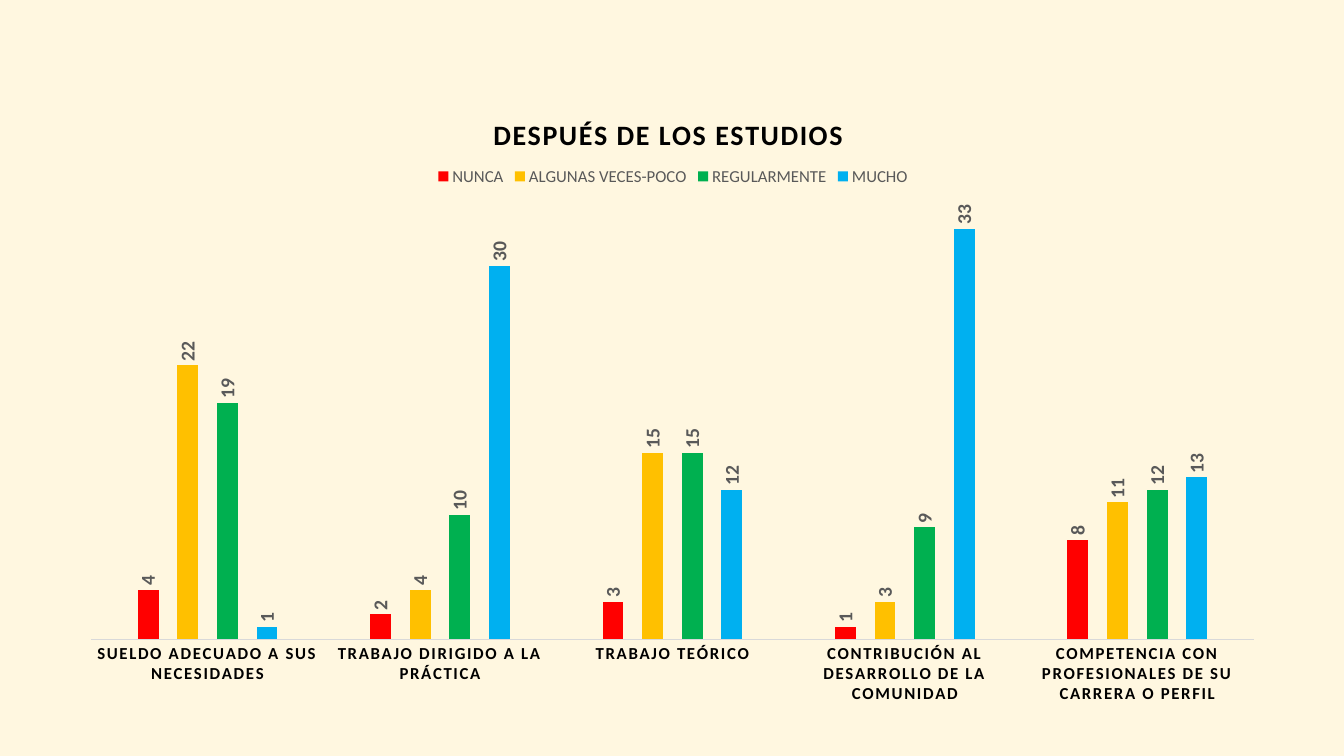
import pptx
import pptx.chart.data
import pptx.dml.color
import pptx.enum.chart
import pptx.oxml
import pptx.oxml.ns
import pptx.util

EMU_PER_PX = 9144000 // 960
SLIDE_SIZE = (1280, 720)
CHART_BOX = (63, 79, 1153, 604)

COLORS = {
    "background": "FFF7E0",
    "title": "000000",
    "category": "000000",
    "label": "595959",
    "axis": "D9D9D9",
    "NUNCA": "FF0000",
    "ALGUNAS VECES-POCO": "FFC000",
    "REGULARMENTE": "00B050",
    "MUCHO": "00B0F0",
}

CATEGORIES = [
    "SUELDO ADECUADO A SUS NECESIDADES",
    "TRABAJO DIRIGIDO A LA PRÁCTICA",
    "TRABAJO TEÓRICO",
    "CONTRIBUCIÓN AL DESARROLLO DE LA COMUNIDAD",
    "COMPETENCIA CON PROFESIONALES DE SU CARRERA O PERFIL",
]
ANSWERS = {
    "NUNCA": [4, 2, 3, 1, 8],
    "ALGUNAS VECES-POCO": [22, 4, 15, 3, 11],
    "REGULARMENTE": [19, 10, 15, 9, 12],
    "MUCHO": [1, 30, 12, 33, 13],
}


def px(length):
    return pptx.util.Emu(length * EMU_PER_PX)


def color(name):
    return pptx.dml.color.RGBColor.from_string(COLORS[name])


def fill_solid(fill, name):
    fill.solid()
    fill.fore_color.rgb = color(name)


def format_font(font, size, color_name, bold=False, spacing=0):
    """Style a font; spacing is in hundredths of a point."""
    font.name = "Calibri"
    font.size = pptx.util.Pt(size)
    font.bold = bold
    font.color.rgb = color(color_name)
    if spacing:
        font._element.set("spc", str(spacing)) if hasattr(font, "_element") else font._rPr.set("spc", str(spacing))


def write_text(frame, text, **font_format):
    span = frame.paragraphs[0].add_run()
    span.text = text
    format_font(span.font, **font_format)


def place(parent, index, left, top, width=None, height=None, inner=False):
    """Fix a chart part at slide px; index is where its layout element belongs."""
    layout = parent.find(pptx.oxml.ns.qn("c:layout"))
    if layout is not None:
        parent.remove(layout)
    chart_left, chart_top, chart_width, chart_height = CHART_BOX
    values = {"xMode": "edge", "yMode": "edge",
              "x": round((left - chart_left) / chart_width, 4),
              "y": round((top - chart_top) / chart_height, 4)}
    if width:
        values["w"] = round(width / chart_width, 4)
        values["h"] = round(height / chart_height, 4)
    target = '<c:layoutTarget val="inner"/>' if inner else ""
    settings = "".join(f'<c:{key} val="{value}"/>' for key, value in values.items())
    namespace = pptx.oxml.ns.nsdecls("c")
    parent.insert(index, pptx.oxml.parse_xml(
        f"<c:layout {namespace}><c:manualLayout>{target}{settings}</c:manualLayout></c:layout>"))


def add_answer_chart(page):
    data = pptx.chart.data.CategoryChartData()
    data.categories = CATEGORIES
    for answer, counts in ANSWERS.items():
        data.add_series(answer, counts)
    kind = pptx.enum.chart.XL_CHART_TYPE.COLUMN_CLUSTERED
    chart = page.shapes.add_chart(kind, *map(px, CHART_BOX), data).chart
    format_font(chart.font, 10, "title")
    return chart


def format_title(chart):
    chart.has_title = True
    title = chart.chart_title
    write_text(title.text_frame, "DESPUÉS DE LOS ESTUDIOS",
               size=20, color_name="title", bold=True, spacing=100)
    title.include_in_layout = False
    place(title._element, 1, 465, 105)


def format_legend(chart):
    chart.has_legend = True
    legend = chart.legend
    legend.position = pptx.enum.chart.XL_LEGEND_POSITION.TOP
    legend.include_in_layout = False
    format_font(legend.font, 12, "label")
    place(legend._element, 1, 412, 156, 458, 24)


def format_axes(chart):
    counts = chart.value_axis
    counts.minimum_scale, counts.maximum_scale = 0, 35
    counts.has_major_gridlines = False
    counts.visible = False
    questions = chart.category_axis
    questions.major_tick_mark = pptx.enum.chart.XL_TICK_MARK.NONE
    format_font(questions.tick_labels.font, 12, "category", bold=True, spacing=120)
    questions.format.line.width = pptx.util.Pt(0.75)
    questions.format.line.color.rgb = color("axis")


def format_columns(chart):
    plot = chart.plots[0]
    plot.gap_width = 444
    plot.overlap = -90
    plot.vary_by_categories = False
    for series in plot.series:
        fill_solid(series.format.fill, series.name)
        series.invert_if_negative = False
        labels = series.data_labels
        labels.show_value = True
        labels.position = pptx.enum.chart.XL_LABEL_POSITION.OUTSIDE_END
        format_font(labels.font, 14, "label", bold=True)
        body = labels._element.find(".//" + pptx.oxml.ns.qn("a:bodyPr"))
        body.set("rot", "-5400000")
        body.set("vert", "horz")
    plot_area = chart._chartSpace.find(".//" + pptx.oxml.ns.qn("c:plotArea"))
    place(plot_area, 0, 87, 194, 1107, 415, inner=True)


def main():
    deck = pptx.Presentation()
    deck.slide_width, deck.slide_height = map(px, SLIDE_SIZE)
    page = deck.slides.add_slide(deck.slide_layouts[6])
    fill_solid(page.background.fill, "background")
    chart = add_answer_chart(page)
    format_title(chart)
    format_legend(chart)
    format_axes(chart)
    format_columns(chart)
    deck.save("out.pptx")


if __name__ == "__main__":
    main()
